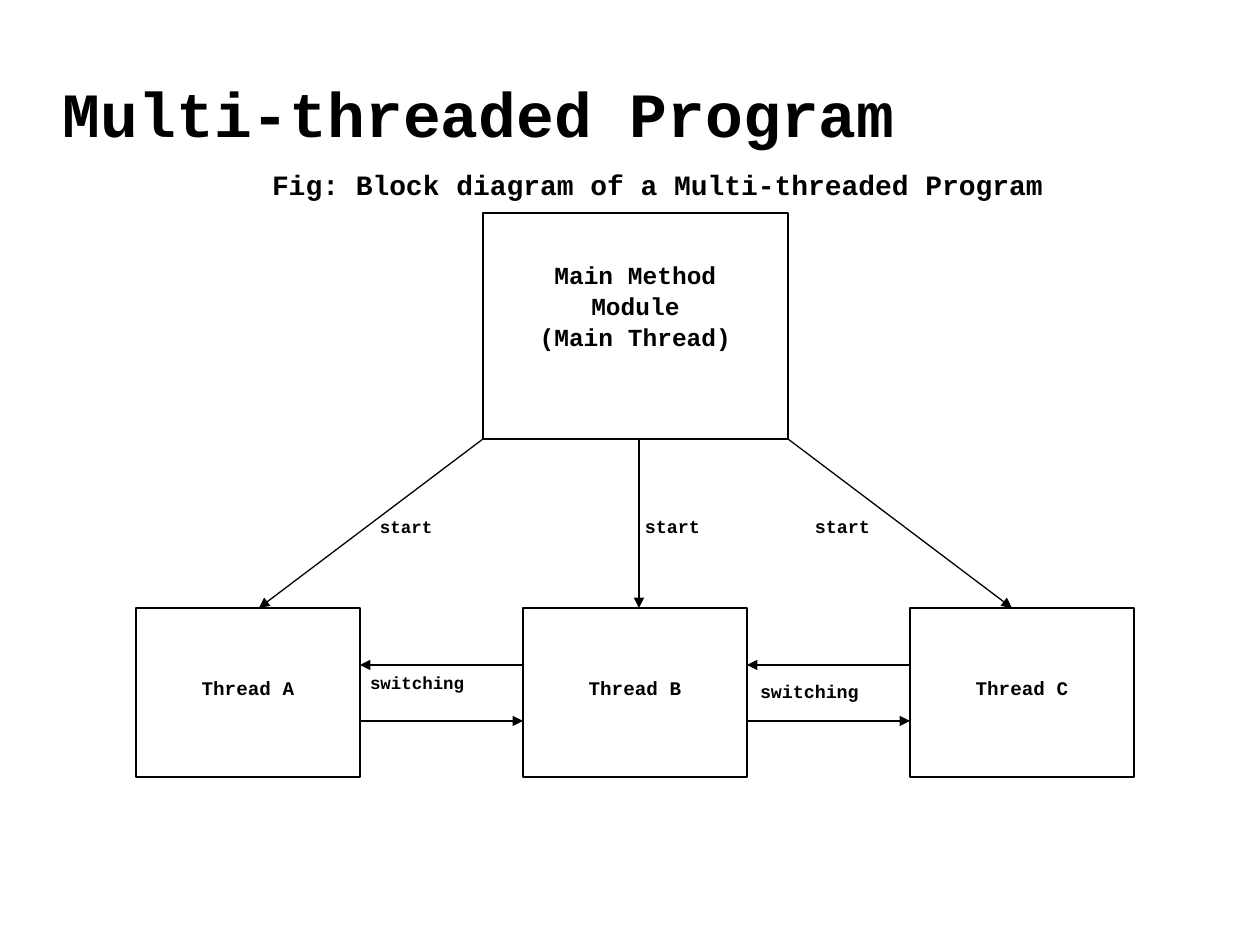
import pptx
import pptx.dml.color
import pptx.enum.shapes
import pptx.enum.text
import pptx.oxml.ns
import pptx.util
from lxml import etree

BLACK = pptx.dml.color.RGBColor(0, 0, 0)
WHITE = pptx.dml.color.RGBColor(255, 255, 255)
FONT = "Courier New"
LEFT = pptx.enum.text.PP_ALIGN.LEFT
CENTER = pptx.enum.text.PP_ALIGN.CENTER
TOP = pptx.enum.text.MSO_ANCHOR.TOP
BOTTOM = pptx.enum.text.MSO_ANCHOR.BOTTOM


def px(length):
    """Turn pixels at 126 to the inch into EMU."""
    return pptx.util.Emu(round(length * 914400 / 126))


def write(shape, text, size, align=LEFT, anchor=TOP, side=0, top=0, bottom=0):
    """Put lines of bold text into a shape."""
    frame = shape.text_frame
    frame.word_wrap = True
    frame.vertical_anchor = anchor
    frame.margin_left = frame.margin_right = px(side)
    frame.margin_top, frame.margin_bottom = px(top), px(bottom)
    for index, line in enumerate(text.split("\n")):
        paragraph = frame.paragraphs[0] if index == 0 else frame.add_paragraph()
        paragraph.alignment = align
        paragraph.line_spacing = 0.9
        if index:
            paragraph.space_before = pptx.util.Pt(size * 0.2)
        run = paragraph.add_run()
        run.text = line
        run.font.name = FONT
        run.font.size = pptx.util.Pt(size)
        run.font.bold = True
        run.font.color.rgb = BLACK


def add_block(slide, box, text, size, outlined=False, **text_format):
    """Draw a white rectangle with text, outlined or bare."""
    block = slide.shapes.add_shape(
        pptx.enum.shapes.MSO_SHAPE.RECTANGLE, *map(px, box))
    block.shadow.inherit = False
    block.fill.solid()
    block.fill.fore_color.rgb = WHITE
    if outlined:
        block.line.color.rgb = BLACK
        block.line.width = pptx.util.Pt(0.75)
    else:
        block.line.fill.background()
    write(block, text, size, **text_format)


def add_arrow(slide, start, end, width=0.75):
    """Draw a line with a triangle head at its end."""
    arrow = slide.shapes.add_connector(
        pptx.enum.shapes.MSO_CONNECTOR.STRAIGHT, *map(px, start + end))
    arrow.line.color.rgb = BLACK
    arrow.line.width = pptx.util.Pt(width)
    qn = pptx.oxml.ns.qn
    etree.SubElement(arrow.line._get_or_add_ln(), qn("a:tailEnd"), type="triangle")
    etree.SubElement(arrow._element.spPr, qn("a:effectLst"))


def add_heading(slide, left, top):
    """Place the title and the figure caption."""
    title = slide.shapes.add_textbox(px(left), px(top), px(1071), px(84))
    write(title, "Multi-threaded Program", 36, anchor=BOTTOM,
          side=13, top=6, bottom=6)
    add_block(slide, (left + 120, top + 92, 975, 39),
              "Fig: Block diagram of a Multi-threaded Program", 16,
              align=CENTER, top=6)


def add_main_thread(slide, left, top, width, height, thread_top):
    """Draw the main module and the arrows that start the threads."""
    labels = ((-103, 10), (162, 10.5), (332, 10.5))
    for offset, size in labels:
        add_block(slide, (left + offset, top + 301, 82, 38), "start", size, top=4)
    add_block(slide, (left, top, width, height),
              "Main Method\nModule\n(Main Thread)", 14, outlined=True,
              align=CENTER, side=13, top=50, bottom=6)
    for offset, spread in ((0, -224), (156, 0), (width, 224)):
        add_arrow(slide, (left + offset, top + height),
                  (left + offset + spread, thread_top))


def add_threads(slide, left, top, width, height, step):
    """Draw the row of threads and the switching between neighbours."""
    for index, letter in enumerate("ABC"):
        add_block(slide, (left + index * step, top, width, height),
                  f"Thread {letter}", 11, outlined=True,
                  align=CENTER, side=13, top=71, bottom=6)
    labels = ((10, 62, 10), (13, 71, 10.5))
    for index, (label_left, label_top, size) in enumerate(labels):
        near = left + index * step + width
        far = left + (index + 1) * step
        add_block(slide, (near + label_left, top + label_top, 142, 38),
                  "switching", size, top=4)
        add_arrow(slide, (far, top + 57), (near, top + 57), 0.8)
        add_arrow(slide, (near, top + 113), (far, top + 113), 0.8)


def main():
    """Build the slide and save it."""
    deck = pptx.Presentation()
    deck.slide_width, deck.slide_height = px(1260), px(945)
    slide = deck.slides.add_slide(deck.slide_layouts[6])
    add_heading(slide, 50, 73)
    add_main_thread(slide, 483, 213, 305, 226, 608)
    add_threads(slide, 136, 608, 224, 169, 387)
    deck.save("out.pptx")


if __name__ == "__main__":
    main()
